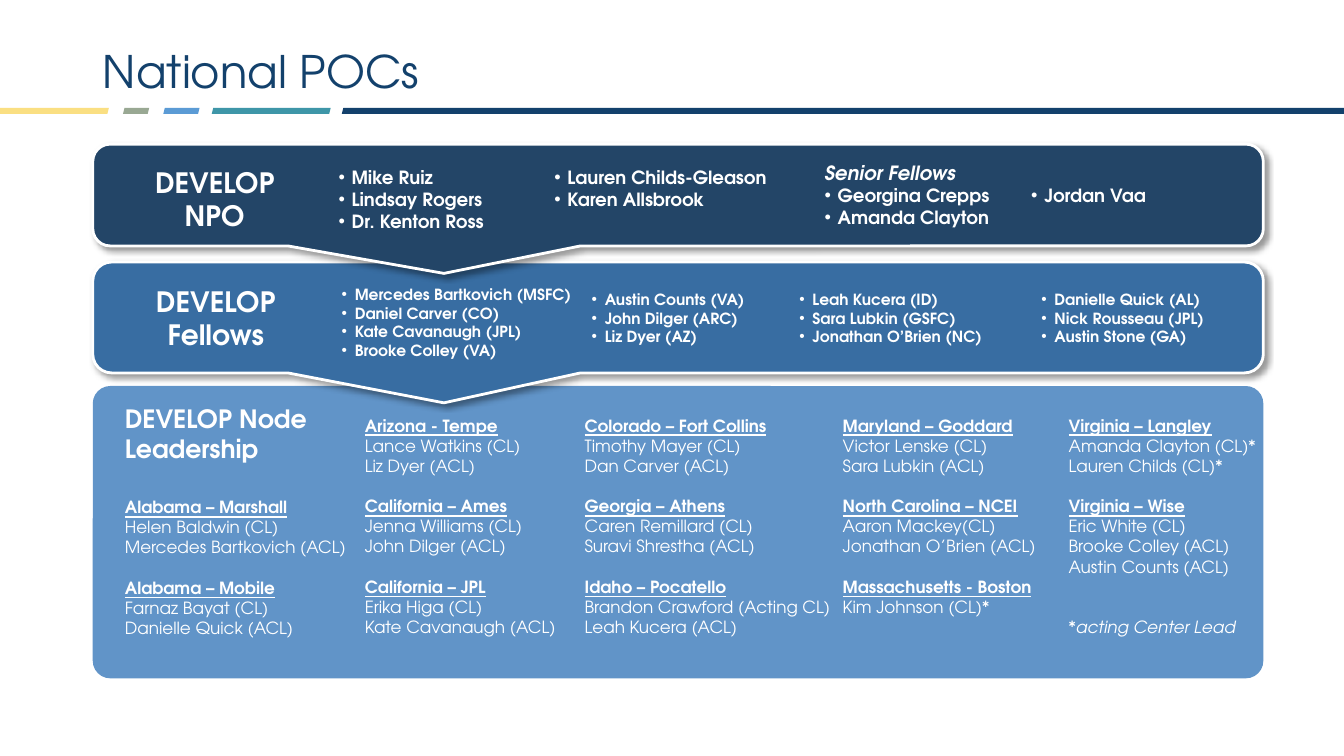
"""Build the National POCs slide: three stacked cards of DEVELOP contacts."""
from dataclasses import dataclass

import lxml.etree
import pptx
import pptx.dml.color
import pptx.enum.shapes
import pptx.enum.text
import pptx.oxml
import pptx.oxml.ns
import pptx.util

Inches = pptx.util.Inches
Pt = pptx.util.Pt
qn = pptx.oxml.ns.qn
SHAPE = pptx.enum.shapes.MSO_SHAPE
ALIGN = pptx.enum.text.PP_ALIGN
ANCHOR = pptx.enum.text.MSO_ANCHOR


@dataclass(frozen=True)
class Style:
    size: float
    bold: bool = False
    italic: bool = False
    underline: bool = False
    bullet: bool = False
    color: str = "FFFFFF"
    align: object = ALIGN.LEFT


class Theme:
    font = "TeX Gyre Adventor"
    outline = "FFFFFF"
    shadow = "000000"
    title = Style(32, color="13416C")
    card_name = Style(20, bold=True, align=ALIGN.CENTER)
    panel_name = Style(18, bold=True)
    group = Style(14, bold=True, italic=True)
    npo = Style(13, bold=True, bullet=True)
    fellow = Style(11, bold=True, bullet=True)
    node = Style(12, bold=True, underline=True)
    leader = Style(12)
    footnote = Style(12, italic=True)
    node_gap = 14.4
    footnote_gap = 28.8


TITLE = "National POCs"
STRIPES = [
    (-0.04, 1.12, "FADF82"),
    (1.22, 0.26, "99A893"),
    (1.62, 0.36, "5B9BD5"),
    (2.1, 1.18, "3E96A8"),
    (3.39, 9.98, "13416C"),
]
STRIPE_TOP, STRIPE_HEIGHT = 1.07, 0.06
CARD_LEFT, CARD_WIDTH = 0.92, 11.61
CARDS = [
    (3.83, 2.9, SHAPE.ROUNDED_RECTANGLE, (0.06,), "6194C8"),
    (2.6, 1.1, SHAPE.ROUNDED_RECTANGULAR_CALLOUT, (-0.2, 0.77, 0.17), "386DA2"),
    (1.43, 1.01, SHAPE.ROUNDED_RECTANGULAR_CALLOUT, (-0.2, 0.77, 0.17), "234567"),
]
CARD_NAMES = [
    (1.39, 1.59, 1.48, 0.77, Theme.card_name, ["DEVELOP", "NPO"]),
    (1.44, 2.77, 1.4, 0.77, Theme.card_name, ["DEVELOP", "Fellows"]),
    (1.14, 3.95, 2.17, 0.71, Theme.panel_name, ["DEVELOP Node Leadership"]),
]
PEOPLE = [
    (3.26, 1.6, 1.96, 0.76, Theme.npo, ["Mike Ruiz", "Lindsay Rogers", "Dr. Kenton Ross"]),
    (5.4, 1.6, 2.54, 0.76, Theme.npo, ["Lauren Childs-Gleason", "Karen Allsbrook"]),
    (10.13, 1.78, 1.7, 0.32, Theme.npo, ["Jordan Vaa"]),
    (3.29, 2.78, 2.58, 0.84, Theme.fellow,
     ["Mercedes Bartkovich (MSFC)", "Daniel Carver (CO)", "Kate Cavanaugh (JPL)", "Brooke Colley (VA)"]),
    (5.77, 2.83, 2.58, 0.66, Theme.fellow, ["Austin Counts (VA)", "John Dilger (ARC)", "Liz Dyer (AZ)"]),
    (7.83, 2.83, 2.58, 0.66, Theme.fellow, ["Leah Kucera (ID)", "Sara Lubkin (GSFC)", "Jonathan O’Brien (NC)"]),
    (10.23, 2.83, 1.97, 0.66, Theme.fellow, ["Danielle Quick (AL)", "Nick Rousseau (JPL)", "Austin Stone (GA)"]),
]
SENIOR_HEADING = "Senior Fellows"
SENIOR_FELLOWS = ["Georgina Crepps", "Amanda Clayton"]
NODE_COLUMNS = [
    (1.14, 4.88, 2.43, [
        ("Alabama – Marshall", ["Helen Baldwin (CL)", "Mercedes Bartkovich (ACL)"]),
        ("Alabama – Mobile", ["Farnaz Bayat (CL)", "Danielle Quick (ACL)"]),
    ]),
    (3.52, 4.07, 2.29, [
        ("Arizona - Tempe", ["Lance Watkins (CL)", "Liz Dyer (ACL)"]),
        ("California – Ames", ["Jenna Williams (CL)", "John Dilger (ACL)"]),
        ("California – JPL", ["Erika Higa (CL)", "Kate Cavanaugh (ACL)"]),
    ]),
    (5.7, 4.07, 2.68, [
        ("Colorado – Fort Collins", ["Timothy Mayer (CL)", "Dan Carver (ACL)"]),
        ("Georgia – Athens", ["Caren Remillard (CL)", "Suravi Shrestha (ACL)"]),
        ("Idaho – Pocatello", ["Brandon Crawford (Acting CL)", "Leah Kucera (ACL)"]),
    ]),
    (8.26, 4.07, 2.35, [
        ("Maryland – Goddard", ["Victor Lenske (CL)", "Sara Lubkin (ACL)"]),
        ("North Carolina – NCEI", ["Aaron Mackey(CL)", "Jonathan O’Brien (ACL)"]),
        ("Massachusetts - Boston", ["Kim Johnson (CL)*"]),
    ]),
    (10.5, 4.07, 2.15, [
        ("Virginia – Langley", ["Amanda Clayton (CL)*", "Lauren Childs (CL)*"]),
        ("Virginia – Wise", ["Eric White (CL)", "Brooke Colley (ACL)", "Austin Counts (ACL)"]),
    ]),
]
FOOTNOTE = "*acting Center Lead"
NODE_BOTTOM = 6.39


def rgb(value):
    return pptx.dml.color.RGBColor.from_string(value)


def add_block(page, kind, left, top, width, height, fill):
    block = page.shapes.add_shape(kind, Inches(left), Inches(top), Inches(width), Inches(height))
    block.shadow.inherit = False
    block.fill.solid()
    block.fill.fore_color.rgb = rgb(fill)
    block.line.fill.background()
    return block


def add_outline_and_shadow(card):
    card.line.color.rgb = rgb(Theme.outline)
    card.line.width = Pt(2)
    effects = card._element.spPr.find(qn("a:effectLst"))
    shadow = lxml.etree.SubElement(
        effects, qn("a:outerShdw"), blurRad=str(Pt(4)), dist=str(Pt(3)), dir="2700000", algn="tl", rotWithShape="0")
    color = lxml.etree.SubElement(shadow, qn("a:srgbClr"), val=Theme.shadow)
    lxml.etree.SubElement(color, qn("a:alpha"), val="40000")


def add_bullet(para):
    properties = para._p.get_or_add_pPr()
    properties.set("marL", str(Inches(0.13)))
    properties.set("indent", str(Inches(-0.13)))
    lxml.etree.SubElement(properties, qn("a:buFont"), typeface="Arial")
    lxml.etree.SubElement(properties, qn("a:buChar"), char="•")


def add_text(page, left, top, width, height, lines):
    box = page.shapes.add_textbox(Inches(left), Inches(top), Inches(width), Inches(height))
    frame = box.text_frame
    frame.word_wrap = True
    for index, (style, words, gap) in enumerate(lines):
        para = frame.add_paragraph() if index else frame.paragraphs[0]
        para.text = words
        para.alignment = style.align
        if index and gap:
            para.space_before = Pt(gap)
        if style.bullet:
            add_bullet(para)
        para.font.name = Theme.font
        para.font.size = Pt(style.size)
        para.font.bold = style.bold
        para.font.italic = style.italic
        para.font.underline = style.underline
        para.font.color.rgb = rgb(style.color)
    return frame


def node_lines(nodes):
    lines = []
    for name, leaders in nodes:
        lines.append((Theme.node, name, Theme.node_gap))
        lines += [(Theme.leader, leader, 0) for leader in leaders]
    return lines


def main():
    deck = pptx.Presentation()
    deck.slide_width, deck.slide_height = Inches(13.33), Inches(7.5)
    page = deck.slides.add_slide(deck.slide_layouts[6])

    for left, width, fill in STRIPES:
        add_block(page, SHAPE.PARALLELOGRAM, left, STRIPE_TOP, width, STRIPE_HEIGHT, fill)
    title = add_text(page, 0.92, 0.4, 11.5, 0.67, [(Theme.title, TITLE, 0)])
    title.vertical_anchor = ANCHOR.MIDDLE
    title.paragraphs[0].line_spacing = 0.9

    for top, height, kind, adjustments, fill in CARDS:
        card = add_block(page, kind, CARD_LEFT, top, CARD_WIDTH, height, fill)
        for index, value in enumerate(adjustments):
            card.adjustments[index] = value
        if kind == SHAPE.ROUNDED_RECTANGULAR_CALLOUT:
            add_outline_and_shadow(card)

    for left, top, width, height, style, words in CARD_NAMES + PEOPLE:
        add_text(page, left, top, width, height, [(style, line, 0) for line in words])
    seniors = [(Theme.group, SENIOR_HEADING, 0)] + [(Theme.npo, name, 0) for name in SENIOR_FELLOWS]
    add_text(page, 8.08, 1.55, 3.5, 0.77, seniors)

    for left, top, width, nodes in NODE_COLUMNS:
        lines = node_lines(nodes)
        if nodes is NODE_COLUMNS[-1][-1]:
            lines.append((Theme.footnote, FOOTNOTE, Theme.footnote_gap))
        add_text(page, left, top, width, NODE_BOTTOM - top, lines)

    deck.save("out.pptx")


if __name__ == "__main__":
    main()
